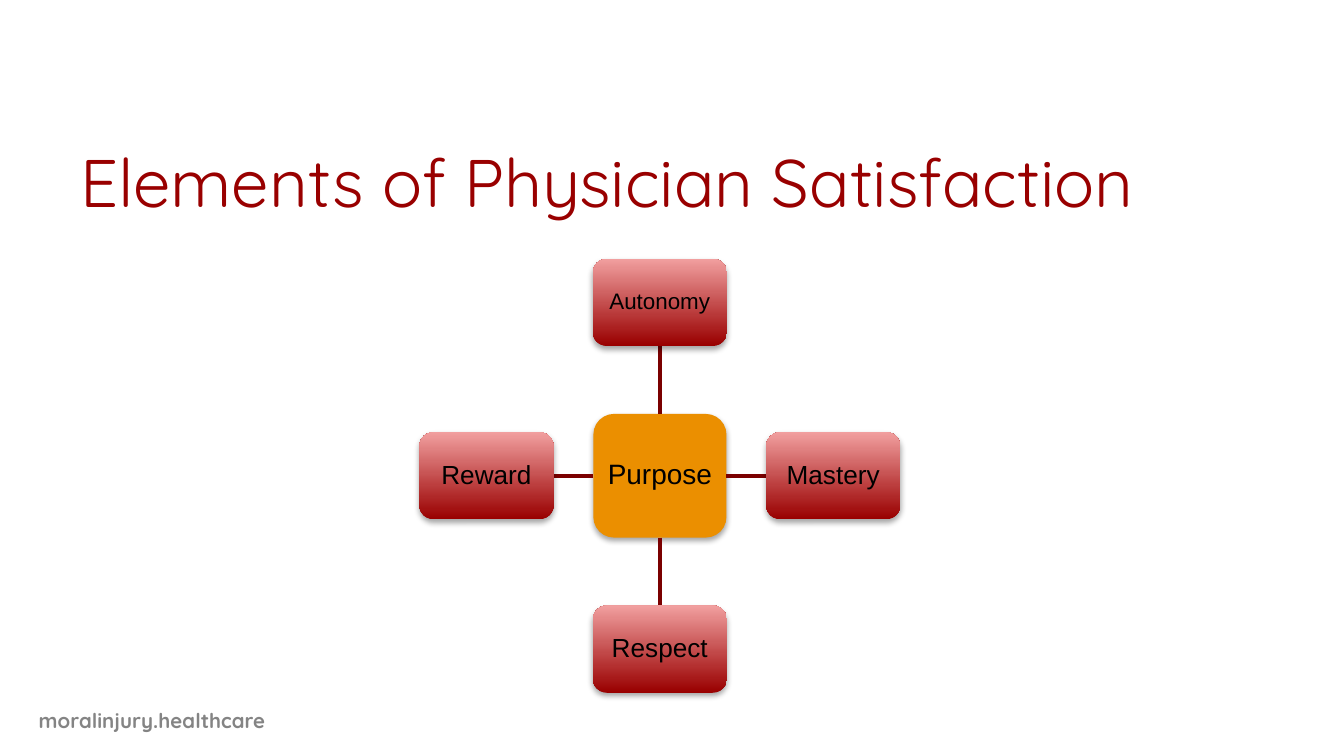
"""Build the physician satisfaction slide: a hub with four linked elements."""
from lxml import etree
from pptx import Presentation
from pptx.dml.color import RGBColor
from pptx.enum import shapes, text
from pptx.oxml import parse_xml
from pptx.oxml.ns import nsdecls, qn
from pptx.util import Inches, Pt

COLORS = {"title": "990000", "footer": "848484", "hub": "EB8F00", "dark": "990000",
          "light": "F19F9F", "link": "7B0000", "text": "000000"}
WIDTH = 10
TITLE = ("Elements of Physician Satisfaction", (0.5, 0.75, 8.4, 0.94), 36, "title", False,
         text.MSO_ANCHOR.BOTTOM)
FOOTER = ("moralinjury.healthcare", (0.19, 5.21, 6.57, 0.3), 11, "footer", True,
          text.MSO_ANCHOR.MIDDLE)
CENTER = (4.91, 3.54)
HUB = ("Purpose", 15, (0.99, 0.92))
NODE_SIZE = (1, 0.65)
REACH = 1.29
NODES = [("Autonomy", 12, (0, -1)), ("Mastery", 14, (1, 0)),
         ("Respect", 14, (0, 1)), ("Reward", 14, (-1, 0))]


def color(name):
    return RGBColor.from_string(COLORS[name])


def add_run(p, words, size, font, name, bold=False):
    r = p.add_run()
    r.text = words
    r.font.size, r.font.name, r.font.bold = Pt(size), font, bold
    r.font.color.rgb = color(name)


def add_label(s, words, box, size, name, bold, anchor):
    tf = s.shapes.add_textbox(*map(Inches, box)).text_frame
    tf.word_wrap, tf.vertical_anchor = True, anchor
    add_run(tf.paragraphs[0], words, size, "Quicksand", name, bold)


def add_box(s, words, size, center, extent):
    corner = [c - e / 2 for c, e in zip(center, extent)]
    sp = s.shapes.add_shape(shapes.MSO_SHAPE.ROUNDED_RECTANGLE, *map(Inches, (*corner, *extent)))
    sp.line.fill.background()
    sp.shadow.inherit = False
    sp._element.spPr.find(qn("a:effectLst")).append(parse_xml(
        f'<a:outerShdw {nsdecls("a")} blurRad="{Pt(3.1)}" dist="{Pt(1.8)}" dir="5400000" '
        'rotWithShape="0"><a:srgbClr val="000000"><a:alpha val="35000"/></a:srgbClr>'
        '</a:outerShdw>'))
    tf = sp.text_frame
    tf.word_wrap, tf.vertical_anchor = True, text.MSO_ANCHOR.MIDDLE
    tf.margin_left = tf.margin_right = tf.margin_top = tf.margin_bottom = Inches(0.04)
    p = tf.paragraphs[0]
    p.alignment, p.line_spacing = text.PP_ALIGN.CENTER, 0.9
    add_run(p, words, size, "Arial", "text")
    return sp


def add_link(s, direction):
    start = [c + d * e / 2 for c, d, e in zip(CENTER, direction, HUB[2])]
    end = [c + d * (REACH - e / 2) for c, d, e in zip(CENTER, direction, NODE_SIZE)]
    link = s.shapes.add_connector(shapes.MSO_CONNECTOR.STRAIGHT, *map(Inches, (*start, *end)))
    link.line.color.rgb, link.line.width = color("link"), Pt(2)
    etree.SubElement(link._element.spPr, qn("a:effectLst"))


def main():
    prs = Presentation()
    prs.slide_width, prs.slide_height = Inches(WIDTH), Inches(WIDTH * 9 / 16)
    s = prs.slides.add_slide(prs.slide_layouts[6])
    for label in (TITLE, FOOTER):
        add_label(s, *label)
    hub = add_box(s, HUB[0], HUB[1], CENTER, HUB[2])
    hub.fill.solid()
    hub.fill.fore_color.rgb = color("hub")
    for words, size, direction in NODES:
        add_link(s, direction)
        center = [c + d * REACH for c, d in zip(CENTER, direction)]
        node = add_box(s, words, size, center, NODE_SIZE)
        node.fill.gradient()
        node.fill.gradient_angle = 90
        for stop, name in zip(node.fill.gradient_stops, ("dark", "light")):
            stop.color.rgb = color(name)
    prs.save("out.pptx")


if __name__ == "__main__":
    main()
